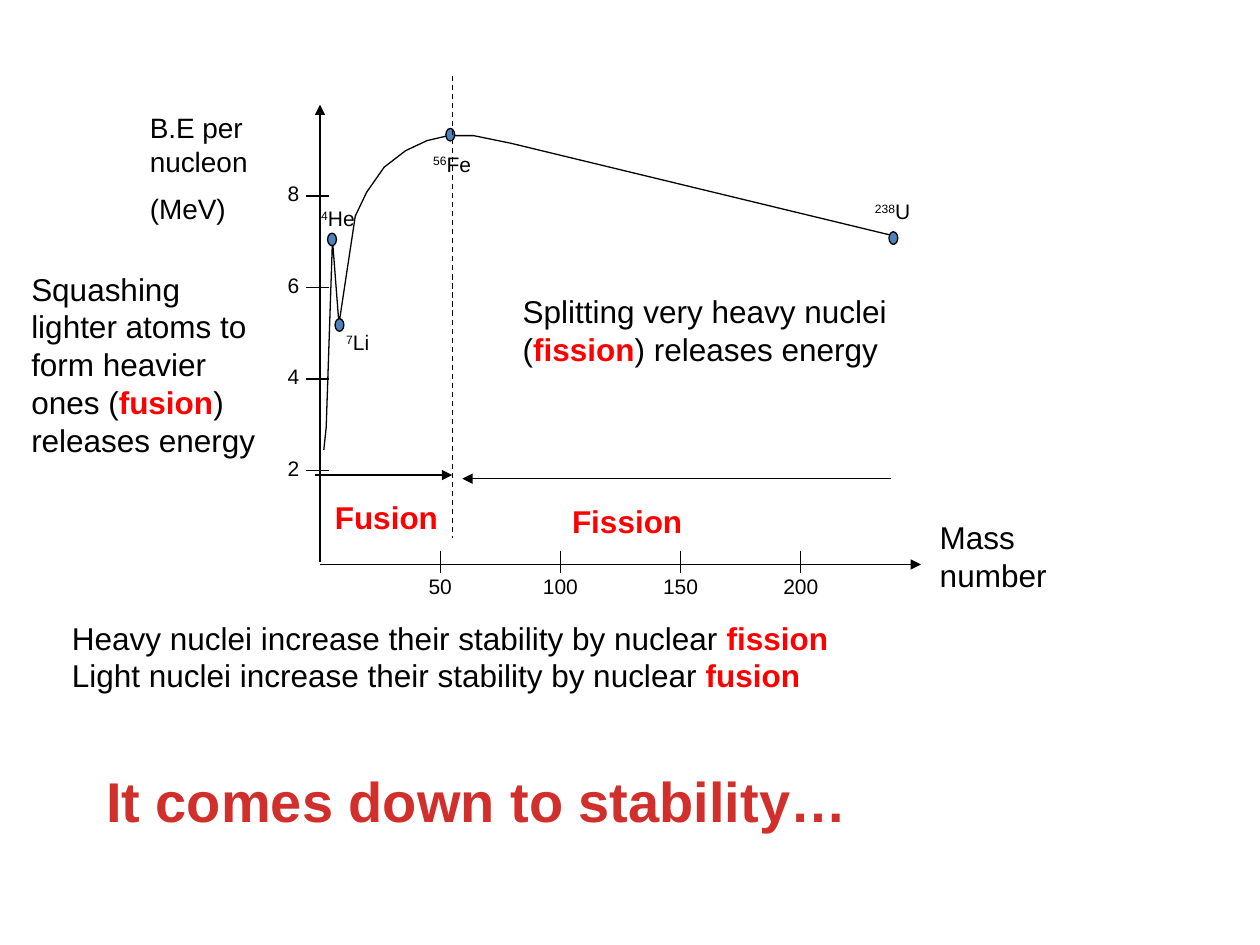
from dataclasses import dataclass

from lxml.etree import SubElement
from pptx import Presentation
from pptx.dml.color import RGBColor
from pptx.enum.dml import MSO_LINE_DASH_STYLE as Dash
from pptx.enum.shapes import MSO_CONNECTOR as Connector, MSO_SHAPE as Shape
from pptx.enum.text import MSO_ANCHOR as Anchor, MSO_AUTO_SIZE as AutoSize, PP_ALIGN as Align
from pptx.oxml.ns import qn
from pptx.util import Inches, Pt

COLUMNS, ROWS = 100, 75
CELL = Inches(0.1)
MAX_MASS, MAX_ENERGY = 250, 10


@dataclass(frozen=True)
class Theme:
    font: str = "Arial"
    ink: RGBColor = RGBColor(0, 0, 0)
    key: RGBColor = RGBColor(0xFF, 0, 0)
    title: RGBColor = RGBColor(0xD0, 0x2F, 0x2C)
    marker: RGBColor = RGBColor(0x4F, 0x81, 0xBD)
    title_size: int = 32
    body_size: int = 18
    axis_size: int = 16
    label_size: int = 12
    stroke: float = 0.75


THEME = Theme()


@dataclass(frozen=True)
class Box:
    """An area in grid columns and rows."""
    left: float
    top: float
    width: float
    height: float

    def emu(self):
        return [cells(n) for n in (self.left, self.top, self.width, self.height)]

    def at(self, mass, energy):
        """Grid position of a data point when the box is the plot area."""
        return (self.left + self.width * mass / MAX_MASS,
                self.top + self.height * (1 - energy / MAX_ENERGY))


def cells(count):
    return round(count * CELL)


def write(frame, paragraphs, size, color=THEME.ink, bold=False, align=Align.LEFT, gap=0):
    """Fill a frame; in each paragraph *stars* enclose key terms, ^carets^ superscripts."""
    frame.word_wrap = True
    frame.auto_size = AutoSize.NONE
    frame.vertical_anchor = Anchor.TOP
    for index, text in enumerate(paragraphs):
        paragraph = frame.paragraphs[0] if index == 0 else frame.add_paragraph()
        paragraph.alignment = align
        paragraph.space_before = Pt(gap if index else 0)
        font = paragraph.font
        font.name, font.size, font.bold = THEME.font, Pt(size), bold
        font.color.rgb = color
        mark = "^" if "^" in text else "*"
        for order, part in enumerate(text.split(mark)):
            if not part:
                continue
            run = paragraph.add_run()
            run.text = part
            if order % 2 and mark == "*":
                run.font.bold = True
                run.font.color.rgb = THEME.key
            elif order % 2:
                run._r.get_or_add_rPr().set("baseline", "30000")


def add_text(slide, box, *paragraphs, **style):
    write(slide.shapes.add_textbox(*box.emu()).text_frame, paragraphs, **style)


def stroke(line):
    line.color.rgb = THEME.ink
    line.width = Pt(THEME.stroke)


def add_line(slide, start, end, arrow=False, dashed=False):
    connector = slide.shapes.add_connector(
        Connector.STRAIGHT, *[cells(n) for n in (*start, *end)])
    stroke(connector.line)
    if dashed:
        connector.line.dash_style = Dash.DASH
    properties = connector._element.spPr
    if arrow:
        SubElement(properties.find(qn("a:ln")), qn("a:tailEnd"), type="triangle")
    SubElement(properties, qn("a:effectLst"))


def draw_axes(slide, plot):
    tick, baseline = 0.9, plot.top + plot.height + 0.2
    right = plot.left + plot.width
    label = dict(size=THEME.label_size)
    add_line(slide, plot.at(0, 0), plot.at(0, MAX_ENERGY), arrow=True)
    add_line(slide, (plot.left, baseline), (right, baseline), arrow=True)
    for energy in range(2, 10, 2):
        x, y = plot.at(0, energy)
        add_line(slide, (x - 1.1, y), (x + 0.7, y))
        add_text(slide, Box(x - 3.55, y - 1.7, 4, 3.1), str(energy), **label)
    for mass in range(50, MAX_MASS, 50):
        x, _ = plot.at(mass, 0)
        add_line(slide, (x, baseline - 1.1), (x, baseline + 0.7))
        add_text(slide, Box(x - 3, baseline + 0.2, 6, 3.1), str(mass),
                 align=Align.CENTER, **label)
    add_text(slide, Box(plot.left - 14.5, plot.top, 11.5, 10.4), "B.E per nucleon", "(MeV)",
             size=THEME.axis_size, gap=THEME.axis_size / 2)
    add_text(slide, Box(right + 0.5, baseline - 4.2, 12.5, 7.1), "Mass number",
             size=THEME.body_size)


def draw_binding_curve(slide, plot):
    curve = [(1.6, 2.45), (2.6, 2.95), (5.2, 7.04), (7.9, 5.2), (14.7, 7.56),
             (19.4, 8.08), (26.7, 8.63), (35.6, 8.99), (44.5, 9.21), (53.4, 9.32),
             (63.9, 9.32), (79.6, 9.15), (239.3, 7.12)]
    points = [tuple(cells(n) for n in plot.at(*point)) for point in curve]
    builder = slide.shapes.build_freeform(*points[0])
    builder.add_line_segments(points[1:], close=False)
    outline = builder.convert_to_shape()
    outline.shadow.inherit = False
    outline.fill.background()
    stroke(outline.line)


def draw_isotopes(slide, plot):
    # Symbol, mass, energy, then the label's offset from its marker
    isotopes = [("^56^Fe", 54.2, 9.34, -2.35, 0.8), ("^4^He", 5, 7.05, -1.85, -3.2),
                ("^238^U", 238.5, 7.08, -2.45, -3.6), ("^7^Li", 8.1, 5.18, -0.45, -0.1)]
    width, height = 0.7, 1
    for symbol, mass, energy, across, down in isotopes:
        x, y = plot.at(mass, energy)
        marker = slide.shapes.add_shape(
            Shape.OVAL, *Box(x - width / 2, y - height / 2, width, height).emu())
        marker.shadow.inherit = False
        marker.fill.solid()
        marker.fill.fore_color.rgb = THEME.marker
        stroke(marker.line)
        add_text(slide, Box(x + across, y + down, 7, 3.1), symbol, size=THEME.label_size)


def draw_reaction_ranges(slide, plot):
    add_line(slide, plot.at(55, 10.63), plot.at(55, 0.52), dashed=True)
    ranges = [("*Fusion*", -2, 55, 1.9, 2.6, 11.2), ("*Fission*", 237.7, 59.2, 1.82, 96, 14.8)]
    for name, start, end, energy, label_mass, width in ranges:
        add_line(slide, plot.at(start, energy), plot.at(end, energy), arrow=True)
        x, y = plot.at(label_mass if name == "*Fission*" else 1, energy)
        add_text(slide, Box(x + (0.7 if label_mass > 90 else 0), y + 1.35, width, 4),
                 name, size=THEME.body_size)
        

def add_explanations(slide):
    add_text(slide, Box(1.5, 20.9, 20.3, 16.2),
             "Squashing lighter atoms to form heavier ones (*fusion*) releases energy",
             size=THEME.body_size)
    add_text(slide, Box(40.5, 22.7, 37.8, 7.1),
             "Splitting very heavy nuclei (*fission*) releases energy", size=THEME.body_size)


def place(placeholder, box):
    placeholder.left, placeholder.top, placeholder.width, placeholder.height = box.emu()
    return placeholder.text_frame


def fill_conclusions(slide, box):
    frame = place(slide.placeholders[1], box)
    write(frame, ["Heavy nuclei increase their stability by nuclear *fission*",
                  "Light nuclei increase their stability by nuclear *fusion*"],
          size=THEME.body_size)
    for paragraph in frame.paragraphs:
        properties = paragraph._p.get_or_add_pPr()
        properties.set("marL", "0")
        properties.set("indent", "0")
        properties.insert_element_before(
            properties.makeelement(qn("a:buNone")), "a:tabLst", "a:defRPr", "a:extLst")


def fill_title(slide, box):
    frame = place(slide.shapes.title, box)
    write(frame, ["It comes down to stability…"], size=THEME.title_size,
          color=THEME.title, bold=True, align=Align.CENTER)
    frame.word_wrap = False


def main():
    deck = Presentation()
    deck.slide_width, deck.slide_height = COLUMNS * CELL, ROWS * CELL
    slide = deck.slides.add_slide(deck.slide_layouts[1])
    plot = Box(25.4, 8.3, 47.7, 36.3)
    for draw in (draw_axes, draw_binding_curve, draw_isotopes, draw_reaction_ranges):
        draw(slide, plot)
    add_explanations(slide)
    fill_conclusions(slide, Box(4.7, 48.6, 88.5, 10.1))
    fill_title(slide, Box(7.2, 60.3, 61.3, 6.4))
    deck.save("out.pptx")


if __name__ == "__main__":
    main()
